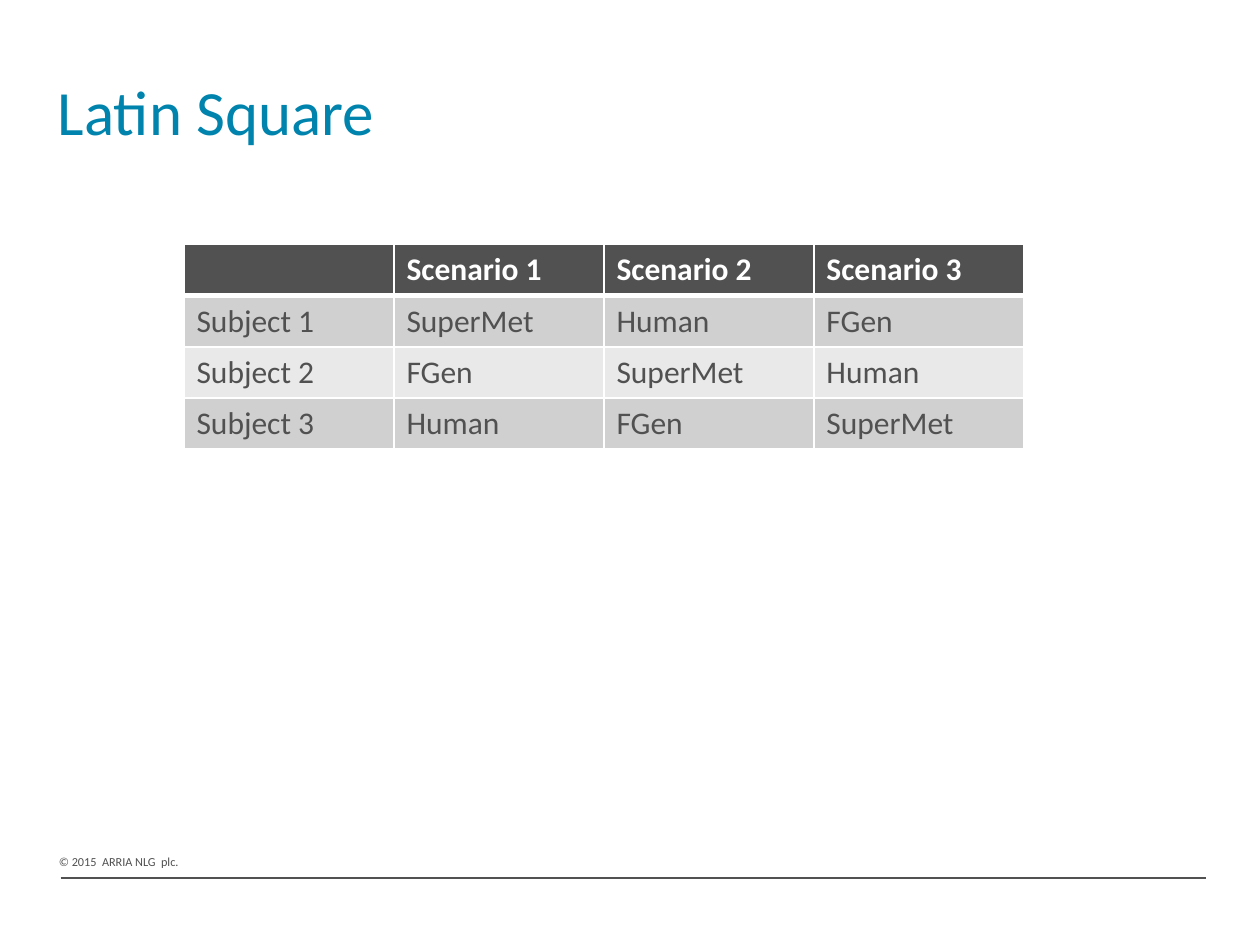
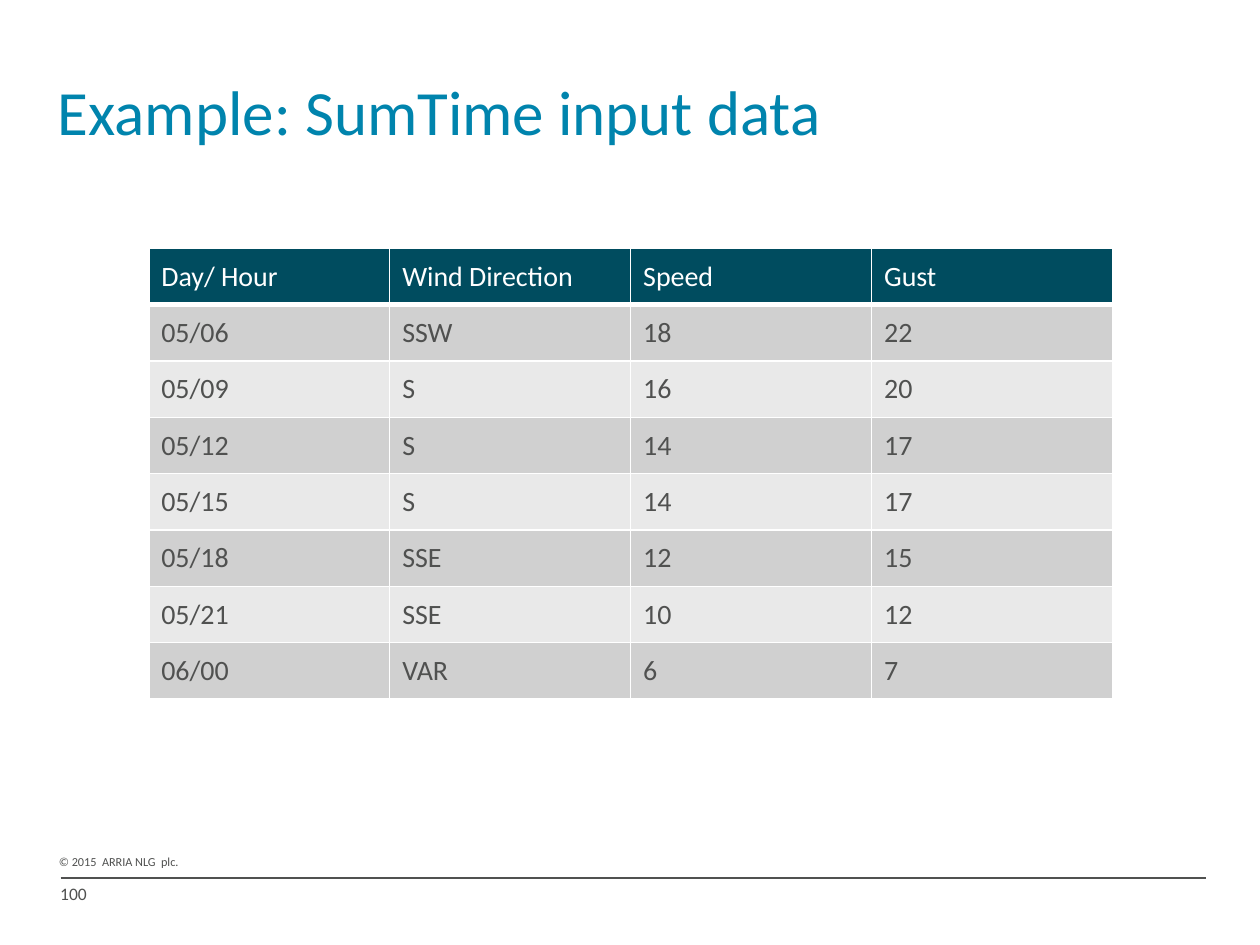
from lxml import etree
from pptx import Presentation
from pptx.dml.color import RGBColor
from pptx.enum.shapes import MSO_CONNECTOR
from pptx.enum.text import MSO_ANCHOR
from pptx.oxml.ns import qn
from pptx.util import Pt

STRAIGHT = MSO_CONNECTOR.STRAIGHT
TOP, MIDDLE = MSO_ANCHOR.TOP, MSO_ANCHOR.MIDDLE

BLUE = RGBColor(0x00, 0x84, 0xAD)
TEAL = RGBColor(0x00, 0x4C, 0x5F)
GRAY = RGBColor(0x50, 0x51, 0x50)
WHITE = RGBColor(0xFF, 0xFF, 0xFF)
BANDS = (RGBColor(0xD0, 0xD0, 0xD0), RGBColor(0xE9, 0xE9, 0xE9))

FONT = "Calibri"
TITLE_FORMAT = {"size": Pt(36), "color": BLUE}
COPYRIGHT_FORMAT = {"size": Pt(7), "color": GRAY}
NUMBER_FORMAT = {"size": Pt(10), "color": GRAY}
THIN, THICK = Pt(1), Pt(3)

LATIN_SQUARE = (
    ("", "Scenario 1", "Scenario 2", "Scenario 3"),
    ("Subject 1", "SuperMet", "Human", "FGen"),
    ("Subject 2", "FGen", "SuperMet", "Human"),
    ("Subject 3", "Human", "FGen", "SuperMet"),
)
WIND_DATA = (
    ("Day/ Hour", "Wind Direction", "Speed", "Gust"),
    ("05/06", "SSW", "18", "22"),
    ("05/09", "S", "16", "20"),
    ("05/12", "S", "14", "17"),
    ("05/15", "S", "14", "17"),
    ("05/18", "SSE", "12", "15"),
    ("05/21", "SSE", "10", "12"),
    ("06/00", "VAR", "6", "7"),
)


def write_text(text_frame, text, text_format):
    text_frame.text = text
    for run in text_frame.paragraphs[0].runs:
        run.font.name = FONT
        for name, value in text_format.items():
            if name == "color":
                run.font.color.rgb = value
            else:
                setattr(run.font, name, value)


def add_text(slide, box, text, text_format, anchor=TOP, wrap=True):
    text_frame = slide.shapes.add_textbox(*map(Pt, box)).text_frame
    text_frame.word_wrap = wrap
    text_frame.vertical_anchor = anchor
    write_text(text_frame, text, text_format)


def add_footer(slide, left, rule_top, number=None):
    add_text(slide, (left, rule_top - 17.3, 85.7, 15.8),
             "© 2015  ARRIA NLG  plc.", COPYRIGHT_FORMAT, wrap=False)
    rule = slide.shapes.add_connector(
        STRAIGHT, Pt(left + 8), Pt(rule_top), Pt(left + 662.4), Pt(rule_top))
    rule.line.color.rgb = GRAY
    rule.line.width = Pt(0.75)
    etree.SubElement(rule._element.spPr, qn("a:effectLst"))
    if number:
        add_text(slide, (left + 0.7, rule_top - 0.7, 32.4, 17.3),
                 number, NUMBER_FORMAT)


def set_borders(cell, widths):
    """Draw white borders; widths maps the sides L, R, T, B in that order."""
    properties = cell._tc.get_or_add_tcPr()
    for side, width in widths.items():
        line = etree.SubElement(properties, qn(f"a:ln{side}"), w=str(width))
        fill = etree.SubElement(line, qn("a:solidFill"))
        etree.SubElement(fill, qn("a:srgbClr"), val=str(WHITE))


def add_banded_table(slide, box, rows, header_fill, size, anchor=TOP,
                     bold_header=False):
    left, top, width, height = box
    table = slide.shapes.add_table(
        len(rows), len(rows[0]), *map(Pt, box)).table
    for column in table.columns:
        column.width = Pt(width / len(rows[0]))
    for row_index, values in enumerate(rows):
        table.rows[row_index].height = Pt(height / len(rows))
        is_header = row_index == 0
        text_format = {
            "size": Pt(size),
            "color": WHITE if is_header else GRAY,
            "bold": is_header and bold_header,
        }
        borders = {
            "L": THIN,
            "R": THIN,
            "T": THICK if row_index == 1 else THIN,
            "B": THICK if is_header else THIN,
        }
        for column_index, value in enumerate(values):
            cell = table.cell(row_index, column_index)
            set_borders(cell, borders)
            cell.fill.solid()
            cell.fill.fore_color.rgb = (
                header_fill if is_header else BANDS[(row_index - 1) % 2])
            cell.vertical_anchor = anchor
            write_text(cell.text_frame, value, text_format)


def add_table_slide(presentation, title, title_width, table_box, rows,
                    number=None, **table_format):
    slide = presentation.slides.add_slide(presentation.slide_layouts[6])
    add_footer(slide, 26.6, 501.8, number)
    add_text(slide, (26, 18, title_width, 90), title, TITLE_FORMAT, MIDDLE)
    add_banded_table(slide, table_box, rows, **table_format)


def main():
    presentation = Presentation()
    presentation.slide_width, presentation.slide_height = Pt(720), Pt(540)
    add_table_slide(presentation, "Latin Square", 576,
                    (105.1, 139.8, 480, 116.8), LATIN_SQUARE,
                    header_fill=GRAY, size=18, bold_header=True)
    add_table_slide(presentation, "Example: SumTime input data", 661,
                    (85, 142, 550.8, 257.6), WIND_DATA, number="100",
                    header_fill=TEAL, size=16, anchor=MIDDLE)
    presentation.save("out.pptx")


if __name__ == "__main__":
    main()
